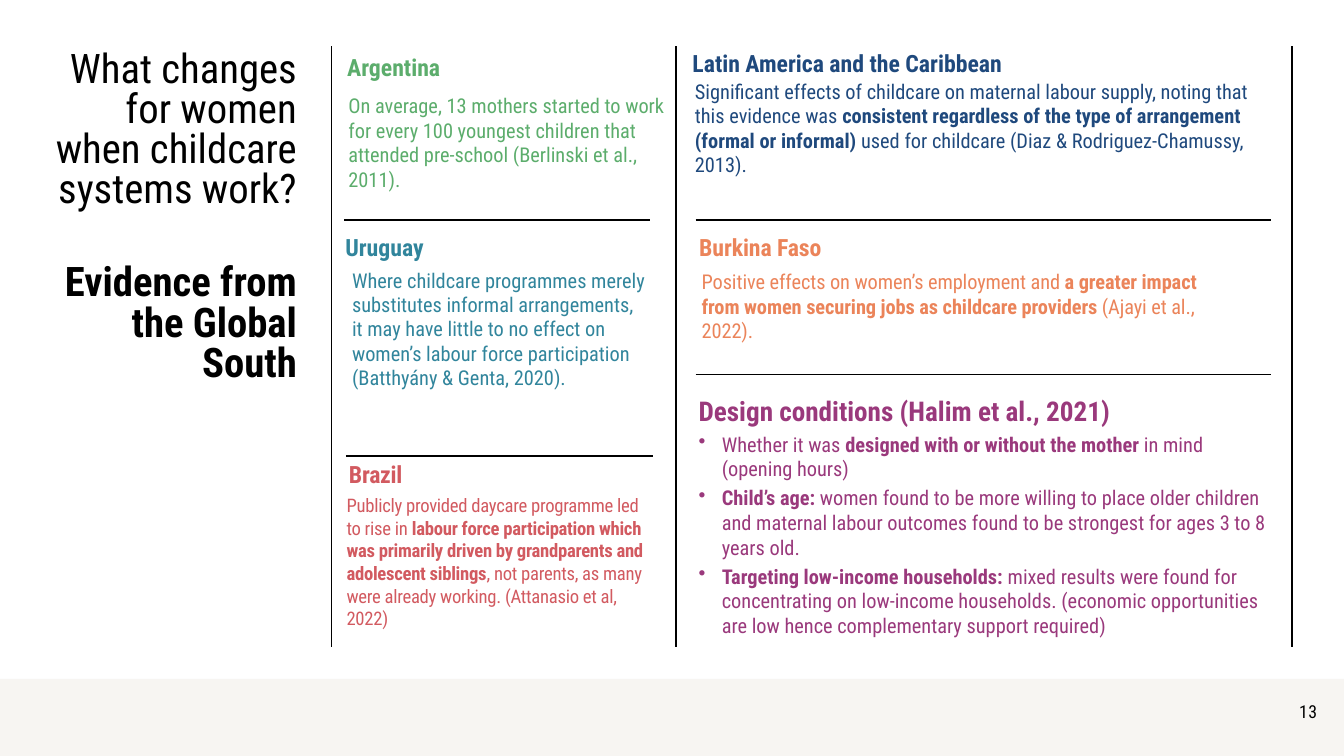
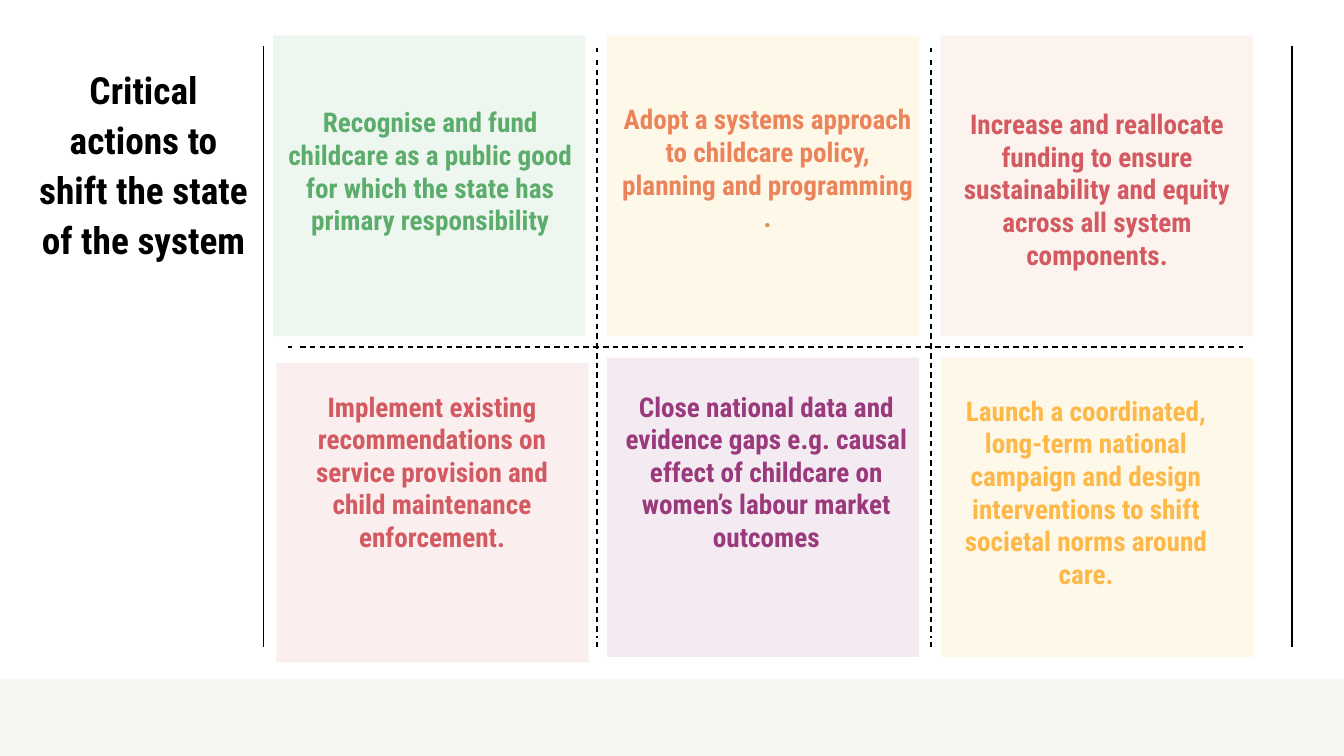
from dataclasses import dataclass

from lxml.etree import SubElement
from pptx import Presentation
from pptx.dml.color import RGBColor
from pptx.enum.dml import MSO_LINE_DASH_STYLE as Dash
from pptx.enum.shapes import MSO_CONNECTOR as Connector, MSO_SHAPE as Shape
from pptx.enum.text import MSO_ANCHOR as Anchor, MSO_AUTO_SIZE as AutoSize, PP_ALIGN as Align
from pptx.oxml.ns import qn
from pptx.util import Emu, Pt

PX = Emu(9144)


@dataclass(frozen=True)
class Theme:
    font: str = "Roboto Condensed"
    black: str = "000000"
    band: str = "EEEBE3"
    green: str = "5CAD6C"
    teal: str = "31859C"
    red: str = "D25A60"
    navy: str = "1F497D"
    orange: str = "EB845A"
    purple: str = "9A397C"
    yellow: str = "F8BB2C"
    amber: str = "FDB848"
    title: int = 48
    action_title: int = 44
    large: int = 32
    heading: int = 28
    body: int = 24
    small: int = 22
    number: int = 21
    rule: float = 1.65


theme = Theme()


def add_rule(slide, x1, y1, x2, y2, dash=None):
    rule = slide.shapes.add_connector(Connector.STRAIGHT, x1 * PX, y1 * PX, x2 * PX, y2 * PX)
    rule.line.color.rgb = RGBColor.from_string(theme.black)
    rule.line.width = Pt(theme.rule)
    if dash:
        rule.line.dash_style = dash
    SubElement(rule.element.spPr, qn("a:effectLst"))


def write(shape, texts, size, colour, bold=False, align=Align.LEFT, line=1.0, gap=0,
          tracking=0, bullets=False):
    frame = shape.text_frame
    frame.word_wrap = True
    frame.auto_size = AutoSize.NONE
    frame.vertical_anchor = Anchor.TOP
    frame.margin_left = frame.margin_top = frame.margin_right = frame.margin_bottom = 0
    for index, text in enumerate(texts):
        paragraph = frame.add_paragraph() if index else frame.paragraphs[0]
        paragraph.alignment = align
        paragraph.line_spacing = line
        paragraph.space_before = Pt(gap if index else 0)
        for part, words in enumerate(text.split("**")):
            if words:
                run = paragraph.add_run()
                run.text = words
                run.font.name = theme.font
                run.font.size = Pt(size)
                run.font.bold = bold or part % 2 == 1
                run.font.color.rgb = RGBColor.from_string(colour)
    if tracking:
        for properties in shape.element.iter(qn("a:rPr")):
            properties.set("spc", str(tracking))
    if bullets:
        for properties in shape.element.iter(qn("a:pPr")):
            properties.set("marL", str(38 * PX))
            properties.set("indent", str(-38 * PX))
            SubElement(properties, qn("a:buChar")).set("char", "•")


presentation = Presentation()
presentation.slide_width = 2199 * PX
presentation.slide_height = 1237 * PX
title_only = presentation.slide_layouts[5]
evidence = presentation.slides.add_slide(title_only)
actions = presentation.slides.add_slide(title_only)
tinted = []

band = evidence.shapes.add_shape(Shape.RECTANGLE, 0, 1111 * PX, 2199 * PX, 126 * PX)
band.element.nvSpPr.cNvPr.set("id", "20")
presentation.slide_master.shapes.element.insert(2, band.element)
tinted.append((band, theme.band, 46))

for slide, title_box, divider_xs in (
    (evidence, (85, 84, 401, 682), (542, 1106, 2114)),
    (actions, (56, 101, 358, 410), (431, 2114)),
):
    title = slide.shapes.title
    title.left, title.top, title.width, title.height = (length * PX for length in title_box)
    for x in divider_xs:
        add_rule(slide, x, 76, x, 1058)

write(evidence.shapes.title,
      ["What changes for women when childcare systems work?", "**Evidence from the Global South**"],
      theme.title, theme.black, align=Align.RIGHT, line=Pt(47.2), gap=63)
write(actions.shapes.title, ["Critical actions to shift the state of the system"],
      theme.action_title, theme.black, bold=True, align=Align.CENTER, line=1.12)

for x, y, width in ((1138, 360, 941), (1138, 613, 941), (563, 360, 501), (566, 746, 502)):
    add_rule(evidence, x, y, x + width, y)

sections = (
    ("Argentina", theme.green, 0, (568, 86, 318, 48), theme.heading,
     (570, 153, 529, 202), theme.body, 1.0,
     ["On average, 13 mothers started to work for every 100 youngest children that attended "
      "pre-school (Berlinski et al., 2011)."]),
    ("Uruguay", theme.teal, 0, (565, 381, 473, 48), theme.heading,
     (576, 438, 481, 242), theme.body, 1.0,
     ["Where childcare programmes merely substitutes informal arrangements, it may have little "
      "to no effect on women’s labour force participation (Batthyány & Genta, 2020)."]),
    ("Brazil", theme.red, -30, (571, 753, 473, 48), theme.heading,
     (567, 808, 488, 223), theme.small, 1.01,
     ["Publicly provided daycare programme led to rise in **labour force participation which "
      "was primarily driven by grandparents and adolescent siblings**, not parents, as many "
      "were already working. (Attanasio et al, 2022)"]),
    ("Latin America and the Caribbean", theme.navy, 0, (1133, 79, 775, 48), theme.heading,
     (1137, 129, 937, 162), theme.body, 1.0,
     ["Significant effects of childcare on maternal labour supply, noting that this evidence "
      "was **consistent regardless of the type of arrangement (formal or informal) **used for "
      "childcare (Diaz & Rodriguez-Chamussy, 2013)."]),
    ("Burkina Faso", theme.orange, -10, (1144, 381, 899, 48), theme.heading,
     (1148, 441, 852, 121), theme.body, 1.0,
     ["Positive effects on women’s employment and **a greater impact from women securing jobs "
      "as childcare providers **(Ajayi et al., 2022)."]),
    ("Design conditions (Halim et al., 2021)", theme.purple, 0, (1143, 646, 941, 53), theme.large,
     (1143, 706, 941, 341), theme.body, 1.01,
     ["Whether it was **designed with or without the mother **in mind (opening hours)",
      "**Child’s age: **women found to be more willing to place older children and maternal "
      "labour outcomes found to be strongest for ages 3 to 8 years old.",
      "**Targeting low-income households: **mixed results were found for concentrating on "
      "low-income households. (economic opportunities are low hence complementary support "
      "required)"]),
)
for heading, colour, tracking, heading_box, heading_size, body_box, body_size, line, texts in sections:
    heading_shape = evidence.shapes.add_textbox(*(length * PX for length in heading_box))
    write(heading_shape, [heading], heading_size, colour, bold=True, tracking=tracking)
    body_shape = evidence.shapes.add_textbox(*(length * PX for length in body_box))
    write(body_shape, texts, body_size, colour, line=line, gap=5.1, tracking=tracking,
          bullets=len(texts) > 1)

number = evidence.shapes.add_textbox(2099 * PX, 1147 * PX, 56 * PX, 35 * PX)
write(number, ["13"], theme.number, theme.black, align=Align.RIGHT, tracking=50)
number.text_frame.vertical_anchor = Anchor.MIDDLE

for start, end, dash in ((0, 7, None), (20, -14, Dash.DASH), (-7, 0, None)):
    first, last = (471, 2034)
    add_rule(actions, (last if start < 0 else first) + start, 568,
             (first if end > 0 else last) + end, 568, dash)
    first, last = (78, 1058)
    for x in (977, 1523):
        add_rule(actions, x, (last if start < 0 else first) + start,
                 x, (first if end > 0 else last) + end, dash)

cards = (
    ("Recognise and fund childcare as a public good for which the state has primary responsibility",
     theme.green, theme.green, 19, 115, 0, 0),
    ("Adopt a systems approach to childcare policy, planning and programming .",
     theme.orange, theme.yellow, 25, 110, 0, 0),
    ("Increase and reallocate funding to ensure sustainability and equity across all system "
     "components.", theme.red, theme.orange, 18, 118, 0, 0),
    ("Implement existing recommendations on service provision and child maintenance enforcement.",
     theme.red, theme.red, 17, 44, 5, 9),
    ("Close national data and evidence gaps e.g. causal effect of childcare on women’s labour "
     "market outcomes", theme.purple, theme.purple, 23, 53, 0, 0),
    ("Launch a coordinated, long-term national campaign and design interventions to shift "
     "societal norms around care.", theme.amber, theme.yellow, 0, 60, 0, 0),
)
for index, (text, colour, tint, inset_left, inset_top, shift_x, shift_y) in enumerate(cards):
    row, column = divmod(index, 3)
    card = actions.shapes.add_shape(
        Shape.RECTANGLE, (447 + 546 * column + shift_x) * PX, (58 + 527 * row + shift_y) * PX,
        511 * PX, (492 - 2 * row) * PX)
    write(card, [text], theme.large, colour, bold=True, align=Align.CENTER)
    card.text_frame.margin_left = inset_left * PX
    card.text_frame.margin_right = (35 - inset_left) * PX
    card.text_frame.margin_top = inset_top * PX
    tinted.append((card, tint, 10))

for shape, colour, opacity in tinted:
    shape.shadow.inherit = False
    shape.line.fill.background()
    shape.fill.solid()
    shape.fill.fore_color.rgb = RGBColor.from_string(colour)
    fill_colour = next(shape.element.spPr.iter(qn("a:srgbClr")))
    SubElement(fill_colour, qn("a:alpha")).set("val", str(opacity * 1000))

presentation.save("out.pptx")
